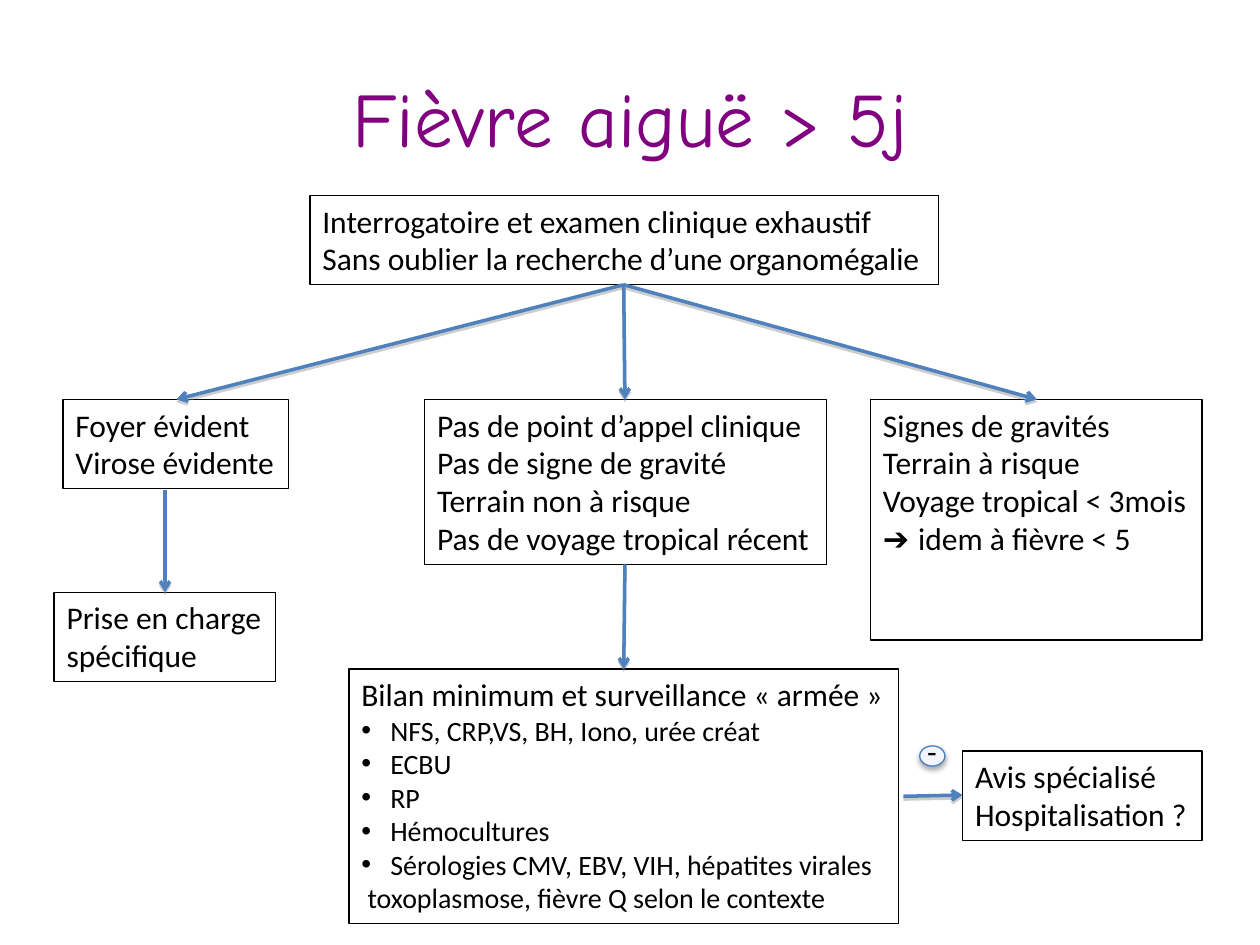
from dataclasses import dataclass

from lxml import etree
from pptx import Presentation
from pptx.dml.color import RGBColor
from pptx.enum.shapes import MSO_CONNECTOR, MSO_SHAPE
from pptx.enum.text import MSO_ANCHOR, MSO_AUTO_SIZE, PP_ALIGN
from pptx.oxml import parse_xml
from pptx.oxml.ns import nsdecls, qn
from pptx.util import Inches, Pt

STRAIGHT = MSO_CONNECTOR.STRAIGHT
OVAL = MSO_SHAPE.OVAL
MIDDLE = MSO_ANCHOR.MIDDLE
CENTER = PP_ALIGN.CENTER
GROW, FIXED = MSO_AUTO_SIZE.SHAPE_TO_FIT_TEXT, MSO_AUTO_SIZE.NONE


@dataclass(frozen=True)
class Theme:
    ink: str = "000000"
    title: str = "800080"
    arrow: str = "4F81BD"
    ring: str = "4B7EBC"
    pale: str = "F2F6FC"
    shade: str = "808080"
    body: str = "Calibri"
    head: str = "Comic Neue"
    sign: str = "Arial"
    big: float = 44
    text: float = 18
    small: float = 16
    thin: float = 0.75
    thick: float = 2


THEME = Theme()


def style(run, size=THEME.text, face=THEME.body, color=THEME.ink):
    run.font.size = Pt(size)
    run.font.name = face
    run.font.color.rgb = RGBColor.from_string(color)


def stroke(line, color, width):
    line.color.rgb = RGBColor.from_string(color)
    line.width = Pt(width)


def shadow(shape, color, alpha, blur, dist):
    props = shape._element.spPr
    for old in props.findall(qn("a:effectLst")):
        props.remove(old)
    props.append(parse_xml(
        f'<a:effectLst {nsdecls("a")}><a:outerShdw blurRad="{Pt(blur)}" '
        f'dist="{Pt(dist)}" dir="5400000" rotWithShape="0">'
        f'<a:srgbClr val="{color}"><a:alpha val="{alpha * 1000}"/></a:srgbClr>'
        '</a:outerShdw></a:effectLst>'))


def bullet(para):
    props = para._p.get_or_add_pPr()
    indent = Inches(0.23)
    props.set("marL", str(indent))
    props.set("indent", str(-indent))
    etree.SubElement(props, qn("a:buFont")).set("typeface", THEME.sign)
    etree.SubElement(props, qn("a:buChar")).set("char", "•")


def label(shapes, place, lines, wrap=False):
    box = shapes.add_textbox(*map(Inches, place))
    frame = box.text_frame
    frame.word_wrap = wrap
    frame.auto_size = FIXED if wrap else GROW
    frame.text = "\n".join(lines)
    for para in frame.paragraphs:
        for run in para.runs:
            style(run)
    return box


def block(shapes, place, lines, wrap=False):
    box = label(shapes, place, lines, wrap)
    stroke(box.line, THEME.ink, THEME.thin)
    return box.text_frame.paragraphs


def arrow(shapes, start, end):
    link = shapes.add_connector(STRAIGHT, *map(Inches, start + end))
    stroke(link.line, THEME.arrow, THEME.thick)
    tail = etree.SubElement(link.line._get_or_add_ln(), qn("a:tailEnd"))
    tail.set("type", "arrow")
    shadow(link, THEME.shade, 38, 0, 1.6)


def heading(shapes, text):
    box = label(shapes, (0.5, 0.3, 9, 1.25), [text], wrap=True)
    box.text_frame.vertical_anchor = MIDDLE
    para = box.text_frame.paragraphs[0]
    para.alignment = CENTER
    style(para.runs[0], THEME.big, THEME.head, THEME.title)


def badge(shapes):
    group = shapes.add_group_shape().shapes
    ring = group.add_shape(OVAL, *map(Inches, (7.3, 5.92, 0.2, 0.16)))
    ring.fill.solid()
    ring.fill.fore_color.rgb = RGBColor.from_string(THEME.pale)
    stroke(ring.line, THEME.ring, THEME.thin)
    shadow(ring, THEME.ink, 35, 3.1, 1.8)
    label(group, (7.26, 5.76, 0.28, 0.4), ["-"])


def main():
    deck = Presentation()
    deck.slide_width, deck.slide_height = Inches(10), Inches(7.5)
    shapes = deck.slides.add_slide(deck.slide_layouts[6]).shapes
    heading(shapes, "Fièvre aiguë > 5j")

    block(shapes, (2.46, 1.55, 4.99, 0.71), [
        "Interrogatoire et examen clinique exhaustif",
        "Sans oublier la recherche d’une organomégalie"])
    row = 3.17
    block(shapes, (0.5, row, 1.79, 0.71), ["Foyer évident", "Virose évidente"])
    block(shapes, (3.37, row, 3.19, 1.31), [
        "Pas de point d’appel clinique", "Pas de signe de gravité",
        "Terrain non à risque", "Pas de voyage tropical récent"])
    signs = block(shapes, (6.91, row, 2.63, 1.91), [
        "Signes de gravités", "Terrain à risque",
        "Voyage tropical < 3mois", "➔ "], wrap=True)
    style(signs[-1].runs[0], face=THEME.sign)
    rest = signs[-1].add_run()
    rest.text = "idem à fièvre < 5"
    style(rest)

    block(shapes, (0.43, 4.7, 1.76, 0.71), ["Prise en charge", "spécifique"])
    tests = block(shapes, (2.77, 5.31, 4.36, 2.02), [
        "Bilan minimum et surveillance « armée »",
        "NFS, CRP,VS, BH, Iono, urée créat", "ECBU", "RP", "Hémocultures",
        "Sérologies CMV, EBV, VIH, hépatites virales",
        " toxoplasmose, fièvre Q selon le contexte"])
    for para in tests[1:]:
        style(para.runs[0], THEME.small)
    for para in tests[1:-1]:
        bullet(para)
    block(shapes, (7.64, 5.96, 1.9, 0.71),
          ["Avis spécialisé", "Hospitalisation ?"])

    root = (4.95, 2.26)
    for x in (1.4, 4.96, 8.23):
        arrow(shapes, root, (x, row))
    arrow(shapes, (4.96, 4.48), (4.95, 5.31))
    arrow(shapes, (1.31, 3.89), (1.31, 4.7))
    arrow(shapes, (7.17, 6.32), (7.64, 6.31))
    badge(shapes)
    deck.save("out.pptx")


if __name__ == "__main__":
    main()
